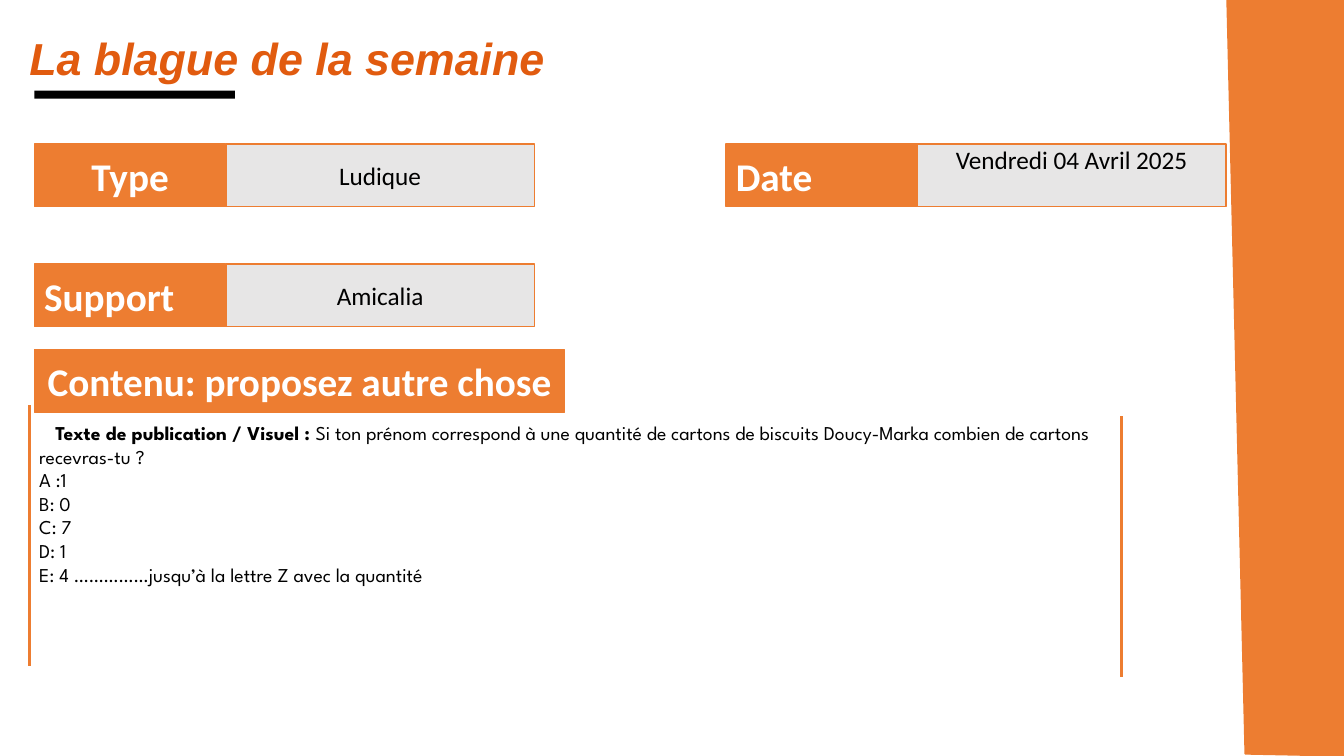
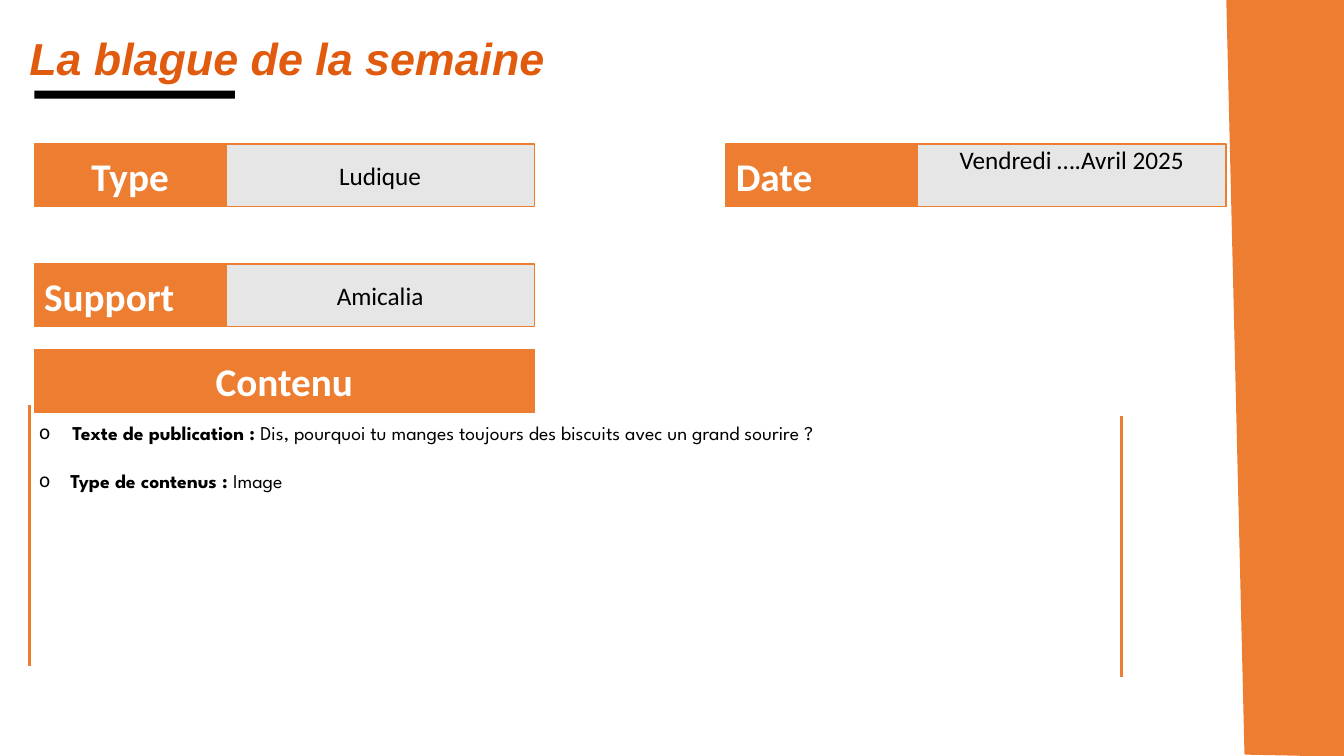
"""Builds two planning slides for the weekly joke."""
from lxml import etree
from pptx import Presentation
from pptx.dml.color import RGBColor
from pptx.enum.shapes import MSO_CONNECTOR, MSO_SHAPE
from pptx.enum.text import MSO_ANCHOR, MSO_AUTO_SIZE, PP_ALIGN
from pptx.oxml.ns import qn
from pptx.util import Pt

PX = 9144
WIDE, HIGH = 1333, 750
ORANGE = RGBColor(0xED, 0x7D, 0x31)
RUST = RGBColor(0xE1, 0x5B, 0x0F)
GREY = RGBColor(0xE7, 0xE6, 0xE6)
BLACK = RGBColor(0, 0, 0)
WHITE = RGBColor(0xFF, 0xFF, 0xFF)
LEFT, MID = PP_ALIGN.LEFT, PP_ALIGN.CENTER
TOP, CORE = MSO_ANCHOR.TOP, MSO_ANCHOR.MIDDLE
RECT, LINE = MSO_SHAPE.RECTANGLE, MSO_CONNECTOR.STRAIGHT
FIXED = MSO_AUTO_SIZE.NONE

HEAD = {"name": "Arial", "size": Pt(32), "bold": True, "italic": True}
LABEL = {"name": "Calibri", "size": Pt(28), "bold": True}
VALUE = {"name": "Calibri", "size": Pt(18)}
BODY = {"name": "League Spartan", "size": Pt(14)}

EDGE = 34
LABEL_W, VALUE_W, ROW_H = 190, 306, 62
PAIR_W = LABEL_W + VALUE_W
ROW_1, ROW_2, ROW_3 = 143, 262, 347
DATE_X = 720

SLIDES = [
    {"date": "Vendredi 04 Avril 2025",
     "band": ("Contenu: proposez autre chose", 526),
     "body": [
         {"bold": "Texte de publication / Visuel : ", "first": 16,
          "text": "Si ton prénom correspond à une quantité de cartons de biscuits "
                  "Doucy-Marka combien de cartons recevras-tu ?"},
         {"text": "A :1"},
         {"text": "B: 0"},
         {"text": "C: 7"},
         {"text": "D: 1"},
         {"text": "E: 4 ……………jusqu’à la lettre Z avec la quantité"}]},
    {"date": "Vendredi ….Avril 2025",
     "band": ("Contenu", PAIR_W),
     "body": [
         {"bold": "Texte de publication : ", "hang": 33, "after": 17,
          "text": "Dis, pourquoi tu manges toujours des biscuits avec un grand sourire ?"},
         {"bold": "Type de contenus : ", "hang": 31, "text": "Image"}]},
]


def put(thing, values):
    """Set attributes from a dict."""
    for key, value in values.items():
        setattr(thing, key, value)


def place(shape, *box):
    """Move and size a shape in px."""
    put(shape, dict(zip(("left", "top", "width", "height"), (n * PX for n in box))))


def write(para, text, style, color, **more):
    """Add a styled run."""
    run = para.add_run()
    run.text = text
    put(run.font, {**style, **more})
    run.font.color.rgb = color


def paint(shape, fill, edge):
    """Fill and outline a shape without shadow."""
    shape.shadow.inherit = False
    shape.fill.solid()
    shape.fill.fore_color.rgb = fill
    shape.line.color.rgb = edge
    shape.line.width = Pt(1)


def block(slide, box, fill, edge):
    """Draw a rectangle."""
    shape = slide.shapes.add_shape(RECT, *(n * PX for n in box))
    paint(shape, fill, edge)
    return shape


def cell(slide, box, text, fill, style, color, align=MID, anchor=CORE):
    """Draw a rectangle with one line of text."""
    frame = block(slide, box, fill, ORANGE).text_frame
    put(frame, {"word_wrap": True, "vertical_anchor": anchor})
    if anchor == TOP:
        frame.margin_top = 0
    para = frame.paragraphs[0]
    para.alignment = align
    write(para, text, style, color)


def pair(slide, x, y, label, value, align=LEFT, anchor=CORE):
    """Draw a label and its value side by side."""
    cell(slide, (x, y, LABEL_W, ROW_H), label, ORANGE, LABEL, WHITE, align)
    cell(slide, (x + LABEL_W, y, VALUE_W, ROW_H), value, GREY, VALUE, BLACK, anchor=anchor)


def rule(slide, x, y, size):
    """Draw a vertical line."""
    line = slide.shapes.add_connector(LINE, x * PX, y * PX, x * PX, (y + size) * PX)
    line.line.color.rgb = ORANGE
    line.line.width = Pt(2.25)
    etree.SubElement(line._element.spPr, qn("a:effectLst"))


def indent(para, item):
    """Set first-line indent, or a hanging bullet."""
    props = para._p.get_or_add_pPr()
    hang = item.get("hang", 0)
    props.set("marL", str(hang * PX))
    props.set("indent", str((item.get("first", 0) - hang) * PX))
    if hang:
        etree.SubElement(props, qn("a:buFont")).set("typeface", "Roboto")
        etree.SubElement(props, qn("a:buChar")).set("char", "o")


def body(slide, items):
    """Write the post text."""
    box = slide.shapes.add_textbox(29 * PX, 413 * PX, 1074 * PX, 222 * PX)
    frame = box.text_frame
    frame.word_wrap = True
    for num, item in enumerate(items):
        para = frame.add_paragraph() if num else frame.paragraphs[0]
        para.space_after = Pt(item.get("after", 0))
        indent(para, item)
        if "bold" in item:
            write(para, item["bold"], BODY, BLACK, bold=True)
        write(para, item["text"], BODY, BLACK)


def title(slide, text):
    """Format the title and underline it."""
    shape = slide.shapes.title
    place(shape, 19, 25, 1103, 52)
    frame = shape.text_frame
    put(frame, {"word_wrap": True, "auto_size": FIXED, "vertical_anchor": TOP})
    para = frame.paragraphs[0]
    para.alignment = LEFT
    write(para, text, HEAD, RUST)
    block(slide, (EDGE, 90, 199, 8), BLACK, BLACK).line.fill.background()


def side(slide):
    """Draw the slanted band on the right."""
    form = slide.shapes.build_freeform(1217, 0, scale=PX)
    form.add_line_segments([(WIDE, 0), (WIDE, HIGH), (1235, 748)], close=True)
    paint(form.convert_to_shape(), ORANGE, ORANGE)


def build(deck, data):
    """Build one slide."""
    slide = deck.slides.add_slide(deck.slide_layouts[5])
    side(slide)
    title(slide, "La blague de la semaine")
    pair(slide, EDGE, ROW_1, "Type", "Ludique", align=MID)
    pair(slide, DATE_X, ROW_1, "Date", data["date"], anchor=TOP)
    pair(slide, EDGE, ROW_2, "Support", "Amicalia")
    rule(slide, 29, 402, 259)
    text, width = data["band"]
    cell(slide, (EDGE, ROW_3, width, ROW_H), text, ORANGE, LABEL, WHITE)
    rule(slide, 1112, 413, 259)
    body(slide, data["body"])


def main():
    """Build and save the deck."""
    deck = Presentation()
    put(deck, {"slide_width": WIDE * PX, "slide_height": HIGH * PX})
    for data in SLIDES:
        build(deck, data)
    deck.save("out.pptx")


if __name__ == "__main__":
    main()
